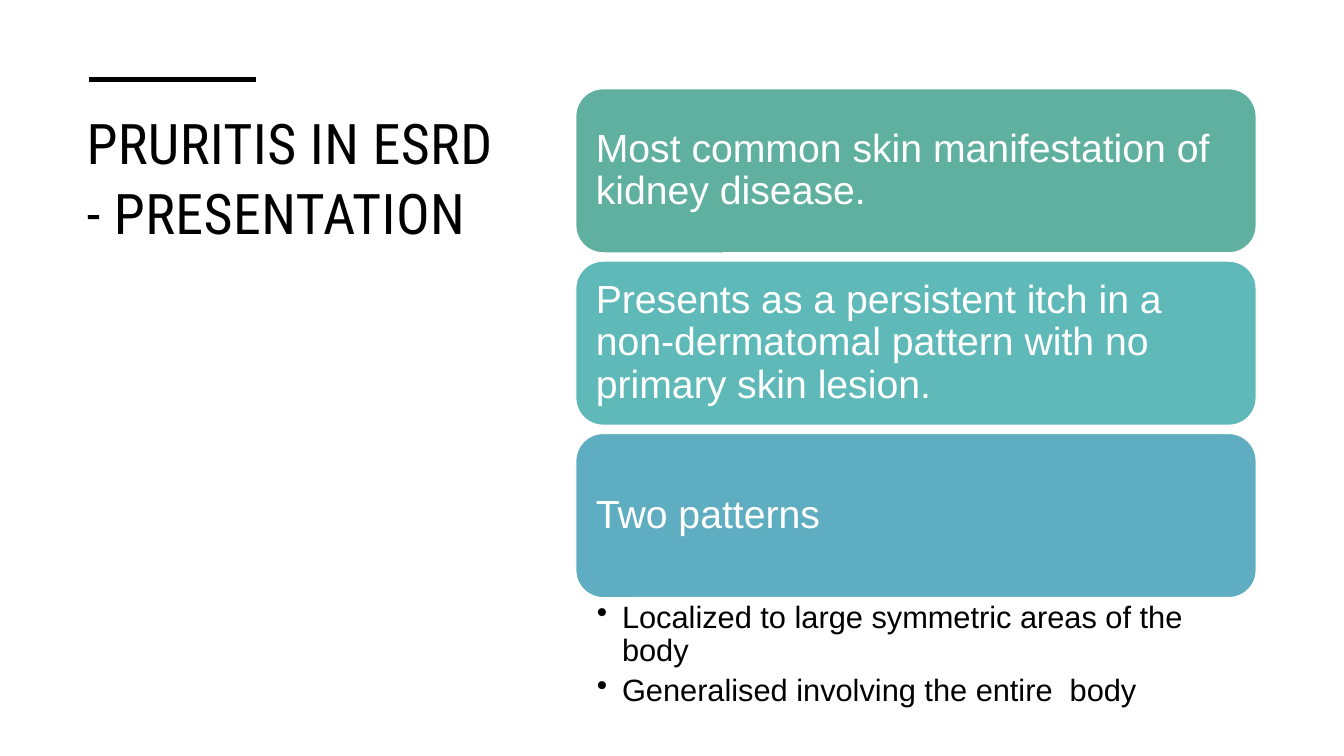
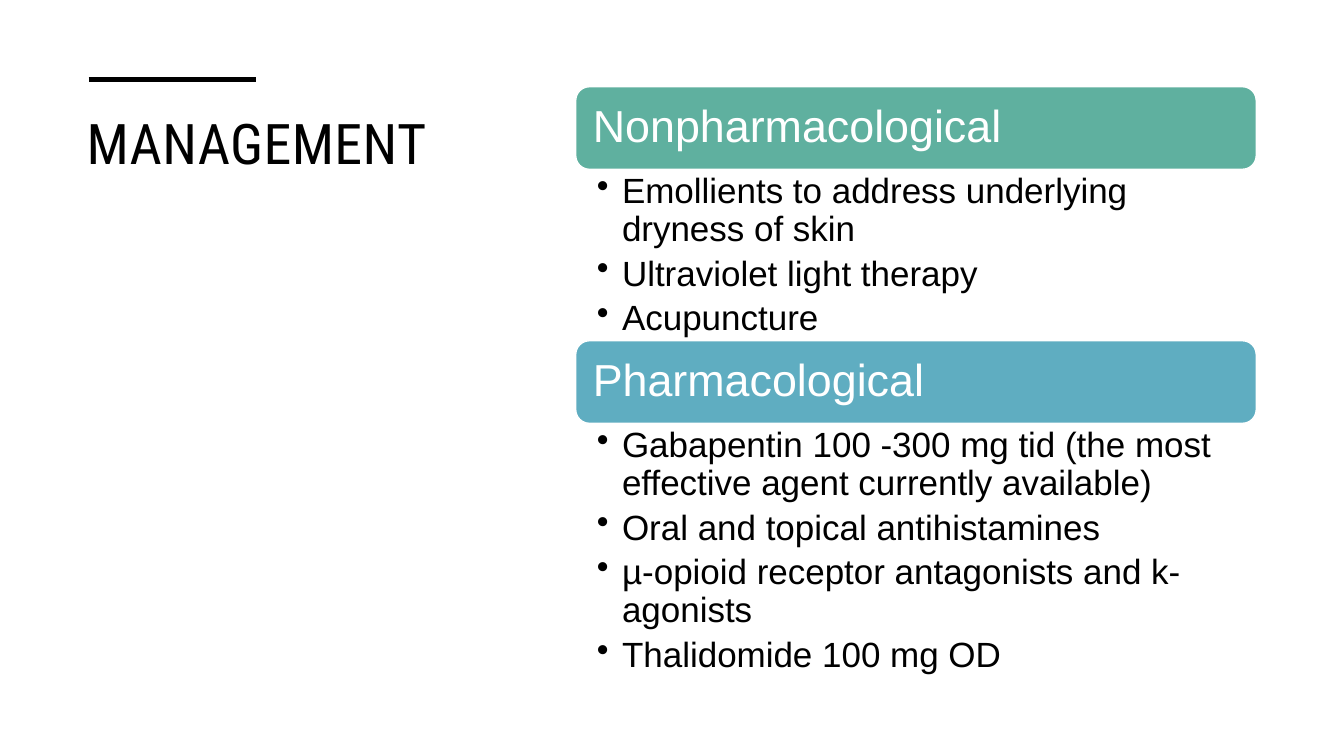
from lxml import etree
from pptx import Presentation
from pptx import util as u
from pptx.dml.color import RGBColor
from pptx.enum import shapes, text
from pptx.oxml import ns

# Shared style
BLACK, WHITE = "000000", "FFFFFF"
GREEN, TEAL, BLUE = "5FB09F", "5FB9B8", "5FADC1"
TITLE_FONT, BODY_FONT = "Roboto Condensed", "Arial"
COLUMN_LEFT, COLUMN_WIDTH = 5.71, 6.75


def rgb(value):
    return RGBColor.from_string(value)


def set_font(p, name, size, color):
    p.font.name = name
    p.font.size = u.Pt(size)
    p.font.color.rgb = rgb(color)


def set_insets(tf, left, top, right, bottom):
    tf.margin_left, tf.margin_top = u.Inches(left), u.Inches(top)
    tf.margin_right, tf.margin_bottom = u.Inches(right), u.Inches(bottom)


def add_text_frame(s, left, top, width, height):
    box = s.shapes.add_textbox(
        u.Inches(left), u.Inches(top), u.Inches(width), u.Inches(height))
    box.text_frame.word_wrap = True
    return box.text_frame


def add_titled_slide(prs, title):
    s = prs.slides.add_slide(prs.slide_layouts[6])

    # Accent rule above the title
    rule = s.shapes.add_connector(
        shapes.MSO_CONNECTOR.STRAIGHT,
        u.Inches(0.88), u.Inches(0.79), u.Inches(2.54), u.Inches(0.79))
    rule.line.color.rgb = rgb(BLACK)
    rule.line.width = u.Pt(3.5)
    etree.SubElement(rule._element.spPr, ns.qn("a:effectLst"))

    # Title with slightly open letter spacing
    p = add_text_frame(s, 0.76, 0.99, 4.28, 4.35).paragraphs[0]
    p.line_spacing = 1.05
    r = p.add_run()
    r.text = title
    r._r.get_or_add_rPr().set("spc", "30")
    set_font(p, TITLE_FONT, 40, BLACK)
    return s


def add_bar(s, top, height, label, size, fill, inset):
    sp = s.shapes.add_shape(
        shapes.MSO_SHAPE.ROUNDED_RECTANGLE, u.Inches(COLUMN_LEFT),
        u.Inches(top), u.Inches(COLUMN_WIDTH), u.Inches(height))
    sp.shadow.inherit = False
    sp.fill.solid()
    sp.fill.fore_color.rgb = rgb(fill)
    sp.line.color.rgb = rgb(WHITE)
    sp.line.width = u.Pt(1)
    tf = sp.text_frame
    tf.word_wrap = True
    tf.vertical_anchor = text.MSO_ANCHOR.MIDDLE
    set_insets(tf, inset, inset, inset, inset)
    p = tf.paragraphs[0]
    p.text = label
    p.alignment = text.PP_ALIGN.LEFT
    p.line_spacing = 0.9
    set_font(p, BODY_FONT, size, WHITE)


def add_bullets(s, top, height, items, size):
    tf = add_text_frame(s, COLUMN_LEFT, top, COLUMN_WIDTH, height)
    set_insets(tf, 0.21, 0.04, 0.22, 0.04)
    for i, item in enumerate(items):
        p = tf.add_paragraph() if i else tf.paragraphs[0]
        p.text = item
        p.line_spacing = 0.9
        p.space_after = u.Pt(size * 0.2)
        set_font(p, BODY_FONT, size, BLACK)
        # Hanging bullet, placed before the default run properties
        pPr = p._p.get_or_add_pPr()
        pPr.set("marL", str(u.Inches(0.25)))
        pPr.set("indent", str(-u.Inches(0.25)))
        bullet = etree.Element(ns.qn("a:buChar"), char="•")
        pPr.find(ns.qn("a:defRPr")).addprevious(bullet)


def build_presentation_slide(prs):
    s = add_titled_slide(prs, "PRURITIS IN ESRD - PRESENTATION")
    top, height, gap = 0.88, 1.63, 0.08
    bars = [
        ("Most common skin manifestation of kidney disease.", GREEN),
        ("Presents as a persistent itch in a non-dermatomal pattern "
         "with no primary skin lesion.", TEAL),
        ("Two patterns", BLUE),
    ]
    for i, (label, fill) in enumerate(bars):
        add_bar(s, top + i * (height + gap), height, label, 28, fill, 0.12)
    add_bullets(s, 5.93, 0.79, [
        "Localized to large symmetric areas of the body",
        "Generalised involving the entire  body",
    ], 22)


def build_management_slide(prs):
    s = add_titled_slide(prs, "MANAGEMENT")
    top, bar_height = 0.86, 0.82
    sections = [
        ("Nonpharmacological", GREEN, 1.7, [
            "Emollients to address underlying dryness of skin",
            "Ultraviolet light therapy",
            "Acupuncture",
        ]),
        ("Pharmacological", BLUE, 2.54, [
            "Gabapentin 100 -300 mg tid (the most effective agent "
            "currently available)",
            "Oral and topical antihistamines",
            "µ-opioid receptor antagonists and k-agonists",
            "Thalidomide 100 mg OD",
        ]),
    ]
    for label, fill, list_height, items in sections:
        add_bar(s, top, bar_height, label, 32, fill, 0.13)
        add_bullets(s, top + bar_height, list_height, items, 25)
        top += bar_height + list_height


def main():
    prs = Presentation()
    prs.slide_width, prs.slide_height = u.Inches(13.33), u.Inches(7.5)
    build_presentation_slide(prs)
    build_management_slide(prs)
    prs.save("out.pptx")


if __name__ == "__main__":
    main()
